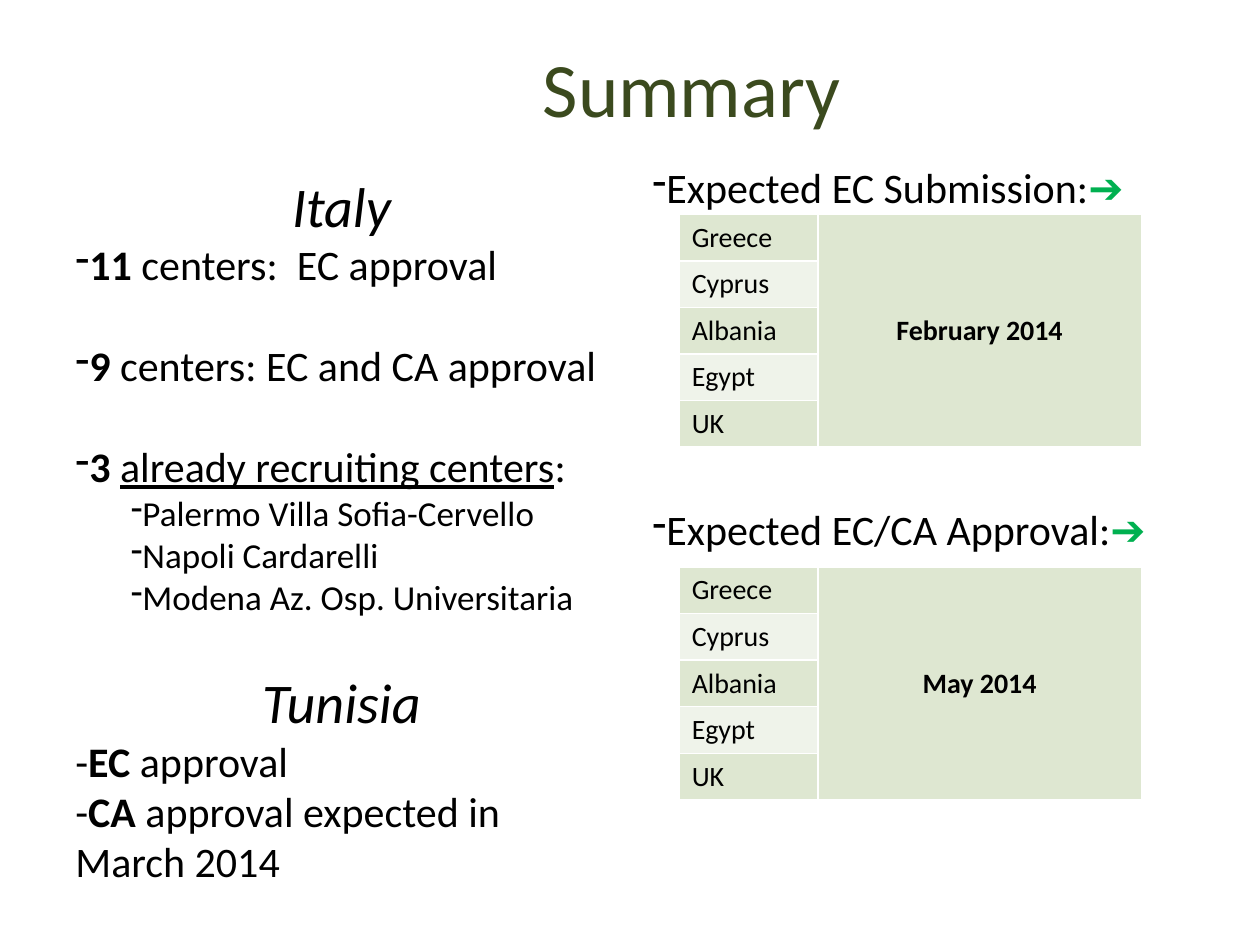
"""Build the trial approval summary slide."""
from dataclasses import dataclass

import lxml.etree
import pptx
import pptx.dml.color
import pptx.enum.text
import pptx.oxml.ns
import pptx.util

Inches = pptx.util.Inches
Pt = pptx.util.Pt
RGB = pptx.dml.color.RGBColor
CENTER = pptx.enum.text.PP_ALIGN.CENTER
MIDDLE = pptx.enum.text.MSO_ANCHOR.MIDDLE
TOP = pptx.enum.text.MSO_ANCHOR.TOP


@dataclass(frozen=True)
class Theme:
    """Colours and type sizes of the slide."""
    font: str = "Calibri"
    ink: RGB = RGB(0x00, 0x00, 0x00)
    olive: RGB = RGB(0x3B, 0x4A, 0x1E)
    arrow: RGB = RGB(0x00, 0xB0, 0x50)
    bands: tuple = (RGB(0xDE, 0xE7, 0xD1), RGB(0xEF, 0xF3, 0xEA))
    title: Pt = Pt(44)
    country: Pt = Pt(32)
    body: Pt = Pt(24)
    center: Pt = Pt(20)
    cell: Pt = Pt(16)


THEME = Theme()
BOLD = {"bold": True}
UNDERLINE = {"underline": True}
GREEN = {"color": THEME.arrow}
LINE_GAP = Pt(29)
TABLE_GAP = Pt(167)
COUNTRIES = ("Greece", "Cyprus", "Albania", "Egypt", "UK")


def set_values(target, values):
    """Set every named attribute of the target."""
    for name, value in values.items():
        setattr(target, name, value)


def add_run(paragraph, text, size, color=THEME.ink, **style):
    """Append one formatted run."""
    run = paragraph.add_run()
    run.text = text
    set_values(run.font, {"name": THEME.font, "size": size, **style})
    run.font.color.rgb = color


def add_bullet(paragraph, indent):
    """Give a paragraph a dash bullet at the given indent."""
    properties = paragraph._p.get_or_add_pPr()
    properties.set("marL", str(indent))
    properties.set("indent", "0")
    bullet = lxml.etree.SubElement(properties, pptx.oxml.ns.qn("a:buChar"))
    bullet.set("char", "-")


def add_text(slide, box, lines, anchor=TOP):
    """Add a text box holding the given lines."""
    frame = slide.shapes.add_textbox(*map(Inches, box)).text_frame
    set_values(frame, {"word_wrap": True, "vertical_anchor": anchor})
    for index, line in enumerate(lines):
        paragraph = frame.add_paragraph() if index else frame.paragraphs[0]
        if line["indent"] is not None:
            add_bullet(paragraph, line["indent"])
        set_values(paragraph, line["layout"])
        for text, style in line["runs"]:
            add_run(paragraph, text, line["size"], **style)


def heading(text, size, layout=None, **style):
    """Describe a centred heading line."""
    return {"runs": [(text, style)], "size": size, "indent": None,
            "layout": {"alignment": CENTER, **(layout or {})}}


def item(*runs, size=THEME.body, indent=Inches(0), **layout):
    """Describe a body line, bulleted unless indent is None."""
    return {"runs": runs, "size": size, "indent": indent, "layout": layout}


def fill_cell(cell, text, **style):
    """Write text into a table cell."""
    add_run(cell.text_frame.paragraphs[0], text, THEME.cell, **style)


def add_schedule(slide, top, month):
    """Add a table of countries sharing one expected month."""
    rows = len(COUNTRIES)
    table = slide.shapes.add_table(
        rows, 2, Inches(5.39), Inches(top), Inches(3.67), Inches(0.37 * rows)).table
    set_values(table, {"first_row": False, "horz_banding": False})
    for column, width in zip(table.columns, (1.1, 2.57)):
        column.width = Inches(width)
    for index, country in enumerate(COUNTRIES):
        for cell, band in zip(table.rows[index].cells, (index % 2, 0)):
            cell.fill.solid()
            cell.fill.fore_color.rgb = THEME.bands[band]
        fill_cell(table.cell(index, 0), country)
    month_cell = table.cell(0, 1)
    month_cell.merge(table.cell(rows - 1, 1))
    month_cell.vertical_anchor = MIDDLE
    month_cell.text_frame.paragraphs[0].alignment = CENTER
    fill_cell(month_cell, month, bold=True)


def main():
    """Build and save the slide."""
    deck = pptx.Presentation()
    set_values(deck, {"slide_width": Inches(10), "slide_height": Inches(7.5)})
    slide = deck.slides.add_slide(deck.slide_layouts[6])
    add_text(slide, (1.48, 0.06, 8.02, 1.25),
             [heading("Summary", THEME.title, color=THEME.olive)], MIDDLE)

    recruiting = [item((name, {}), size=THEME.center, indent=Inches(0.44))
                  for name in ("Palermo Villa Sofia-Cervello", "Napoli Cardarelli",
                               "Modena Az. Osp. Universitaria")]
    add_text(slide, (0.5, 1.31, 4.42, 5.39), [
        heading("Italy", THEME.country, italic=True),
        item(("11", BOLD), (" centers:  EC approval", {})),
        item(("9", BOLD), (" centers: EC and CA approval", {}), space_before=LINE_GAP),
        item(("3 ", BOLD), ("already recruiting centers", UNDERLINE), (":", {}),
             space_before=LINE_GAP),
        *recruiting,
        heading("Tunisia", THEME.country, {"space_before": LINE_GAP}, italic=True),
        item(("-", {}), ("EC", BOLD), (" approval", {}), indent=None),
        item(("-", {}), ("CA ", BOLD), ("approval expected in March 2014", {}),
             indent=None),
    ])
    add_text(slide, (5.08, 1.23, 4.42, 5.39), [
        item(("Expected EC Submission:", {}), ("➔", GREEN)),
        item(("Expected EC/CA Approval:", {}), ("➔", GREEN), space_before=TABLE_GAP),
    ])
    for top, month in ((4.5, "May 2014"), (1.7, "February 2014")):
        add_schedule(slide, top, month)
    deck.save("out.pptx")


if __name__ == "__main__":
    main()
